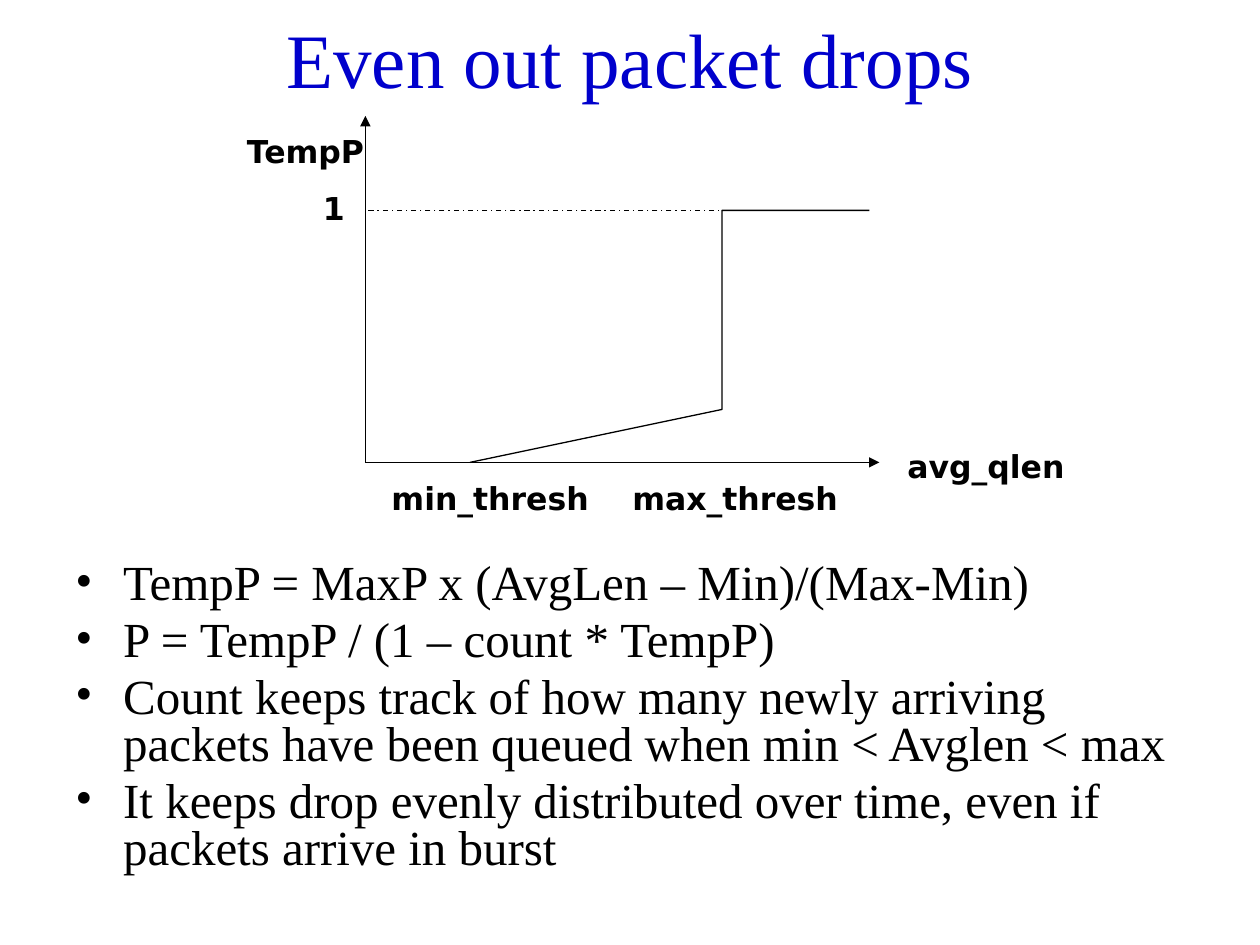
from lxml import etree
from pptx import Presentation
from pptx.dml.color import RGBColor
from pptx.enum.dml import MSO_LINE
from pptx.enum.shapes import MSO_CONNECTOR
from pptx.enum.text import MSO_ANCHOR, PP_ALIGN
from pptx.oxml.ns import qn
from pptx.util import Inches, Pt

BLUE = RGBColor(0x00, 0x00, 0xCC)
BLACK = RGBColor(0x00, 0x00, 0x00)
SERIF, SANS = "Times New Roman", "DejaVu Sans"
CENTER, LEFT = PP_ALIGN.CENTER, PP_ALIGN.LEFT
MIDDLE, TOP = MSO_ANCHOR.MIDDLE, MSO_ANCHOR.TOP
STRAIGHT, DASH_DOT = MSO_CONNECTOR.STRAIGHT, MSO_LINE.DASH_DOT

# Content
TITLE = "Even out packet drops"
BULLETS = [
    "TempP = MaxP x (AvgLen – Min)/(Max-Min)",
    "P = TempP / (1 – count * TempP)",
    "Count keeps track of how many newly arriving packets have been queued "
    "when min < Avglen < max",
    "It keeps drop evenly distributed over time, even if packets arrive in burst",
]

# Graph positions, in inches
ORIGIN_X, ORIGIN_Y = 2.9, 3.67
AXIS_TOP, AXIS_RIGHT = 0.92, 6.98
MIN_X, MAX_X, CURVE_END = 3.73, 5.73, 6.9
ONE_Y, MAX_P_Y = 1.67, 3.25
LABEL_HEIGHT = 0.4
LABELS = [  # text, left, top, width
    ("avg_qlen", 7.08, 3.5, 1.49),
    ("TempP", 1.84, 1, 1.17),
    ("min_thresh", 2.98, 3.75, 1.82),
    ("1", 2.46, 1.45, 0.38),
    ("max_thresh", 4.89, 3.75, 1.89),
]
LINES = [  # start, end, is an axis
    ((ORIGIN_X, ORIGIN_Y), (ORIGIN_X, AXIS_TOP), True),
    ((ORIGIN_X, ORIGIN_Y), (AXIS_RIGHT, ORIGIN_Y), True),
    ((MAX_X + 0.5, ONE_Y), (ORIGIN_X, ONE_Y), False),
]
CURVE = [(MIN_X, ORIGIN_Y), (MAX_X, MAX_P_Y), (MAX_X, ONE_Y), (CURVE_END, ONE_Y)]


def add_text(slide, box, texts, font_name, size, color=BLACK, bold=False,
             align=CENTER, anchor=TOP, wrap=True):
    frame = slide.shapes.add_textbox(*map(Inches, box)).text_frame
    frame.word_wrap = wrap
    frame.vertical_anchor = anchor
    frame.text = "\n".join(texts)
    for paragraph in frame.paragraphs:
        paragraph.alignment = align
        font = paragraph.font
        font.name, font.size, font.bold = font_name, Pt(size), bold
        font.color.rgb = color
    return frame


def style_line(line):
    line.color.rgb = BLACK
    line.width = Pt(0.75)


def add_line(slide, start, end, is_axis):
    connector = slide.shapes.add_connector(STRAIGHT, *map(Inches, start + end))
    style_line(connector.line)
    if is_axis:
        etree.SubElement(connector.line._get_or_add_ln(), qn("a:tailEnd"), type="triangle")
    else:
        connector.line.dash_style = DASH_DOT
    etree.SubElement(connector._element.spPr, qn("a:effectLst"))


def add_bullets(slide):
    frame = add_text(slide, (0.5, 4.42, 9, 2.83), BULLETS, SERIF, 28, align=LEFT)
    for paragraph in frame.paragraphs:
        paragraph.line_spacing = 0.8
        paragraph.space_before = Pt(5.6)
        properties = paragraph._p.get_or_add_pPr()
        properties.set("marL", str(Inches(0.38)))
        properties.set("indent", str(-Inches(0.38)))
        run_defaults = properties.find(qn("a:defRPr"))
        run_defaults.addprevious(etree.Element(qn("a:buFont"), typeface=SERIF))
        run_defaults.addprevious(etree.Element(qn("a:buChar"), char="•"))


def add_graph(slide):
    for line in LINES:
        add_line(slide, *line)
    for text, left, top, width in LABELS:
        add_text(slide, (left, top, width, LABEL_HEIGHT), [text], SANS, 18,
                 bold=True, wrap=False)

    # Drop probability against average queue length
    start, *corners = [(Inches(x), Inches(y)) for x, y in CURVE]
    builder = slide.shapes.build_freeform(*start)
    builder.add_line_segments(corners, close=False)
    curve = builder.convert_to_shape()
    curve.fill.background()
    curve.shadow.inherit = False
    style_line(curve.line)


def main():
    deck = Presentation()
    deck.slide_width, deck.slide_height = Inches(10), Inches(7.5)
    slide = deck.slides.add_slide(deck.slide_layouts[6])
    add_text(slide, (0.5, -0.17, 9, 1.25), [TITLE], SERIF, 44, BLUE, anchor=MIDDLE)
    add_bullets(slide)
    add_graph(slide)
    deck.save("out.pptx")


if __name__ == "__main__":
    main()
